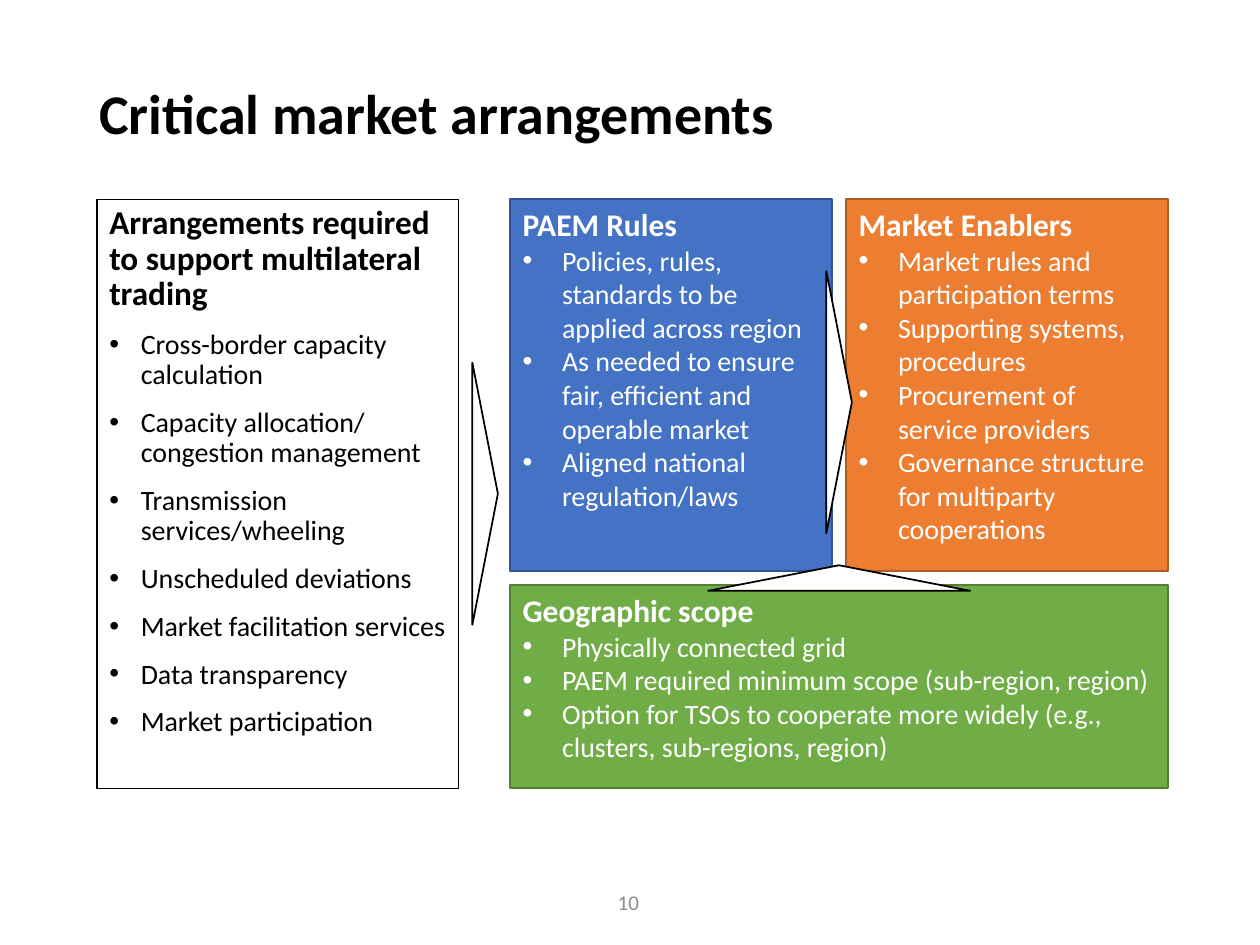
from pptx import Presentation
from pptx.dml.color import RGBColor
from pptx.enum.shapes import MSO_SHAPE
from pptx.enum.text import MSO_ANCHOR, PP_ALIGN
from pptx.oxml.xmlchemy import OxmlElement
from pptx.util import Pt

COLORS = {
    "black": "000000", "white": "FFFFFF", "grey": "8C8C8C",
    "blue": "4472C4", "blue_edge": "325491",
    "orange": "ED7D31", "orange_edge": "AF5C24",
    "green": "70AD47", "green_edge": "538035",
}
FONT = "Calibri"

# Grid of the panels, in points
LEFT, TOP, BOTTOM = 55.4, 113.8, 450.4
RULES_LEFT, PANEL_WIDTH, PANEL_HEIGHT, GAP = 291.6, 183.8, 212.4, 8.2
ENABLERS_LEFT = RULES_LEFT + PANEL_WIDTH + GAP
SCOPE_TOP = TOP + PANEL_HEIGHT + GAP
SCOPE_WIDTH = 2 * PANEL_WIDTH + GAP
ARROW_LENGTH, ARROW_DEPTH = 149.8, 14.6

REQUIRED = [
    "Cross-border capacity calculation",
    "Capacity allocation/ congestion management",
    "Transmission services/wheeling",
    "Unscheduled deviations",
    "Market facilitation services",
    "Data transparency",
    "Market participation",
]
RULES = [
    "Policies, rules, standards to be applied across region",
    "As needed to ensure fair, efficient and operable market",
    "Aligned national regulation/laws",
]
ENABLERS = [
    "Market rules and participation terms",
    "Supporting systems, procedures",
    "Procurement of service providers",
    "Governance structure for multiparty cooperations",
]
SCOPE = [
    "Physically connected grid",
    "PAEM required minimum scope (sub-region, region)",
    "Option for TSOs to cooperate more widely (e.g., clusters, sub-regions, region)",
]


def rgb(name):
    return RGBColor.from_string(COLORS[name])


def style(para, size, color, bold=False):
    font = para.font
    font.name, font.size, font.bold = FONT, Pt(size), bold
    font.color.rgb = rgb(color)


def add_bullet(para, indent):
    properties = para._p.get_or_add_pPr()
    properties.set("marL", str(Pt(indent)))
    properties.set("indent", str(-Pt(indent)))
    face = OxmlElement("a:buFont")
    face.set("typeface", "Arial")
    bullet = OxmlElement("a:buChar")
    bullet.set("char", "•")
    properties.extend([face, bullet])


def add_outlined(page, kind, left, top, width, height, fill, line, weight=1):
    shape = page.shapes.add_shape(kind, Pt(left), Pt(top), Pt(width), Pt(height))
    shape.shadow.inherit = False
    shape.fill.solid()
    shape.fill.fore_color.rgb = rgb(fill)
    shape.line.color.rgb = rgb(line)
    shape.line.width = Pt(weight)
    return shape


def add_panel(page, place, fill, line, heading, items, color="white", weight=1,
              heading_size=18, indent=22.5, spacing=1.0, before=0):
    box = add_outlined(page, MSO_SHAPE.RECTANGLE, *place, fill, line, weight)
    frame = box.text_frame
    frame.word_wrap = True
    frame.vertical_anchor = MSO_ANCHOR.TOP
    for index, text in enumerate([heading, *items]):
        para = frame.add_paragraph() if index else frame.paragraphs[0]
        para.text = text
        para.alignment = PP_ALIGN.LEFT
        para.line_spacing = spacing
        if index:
            para.space_before = Pt(before)
            add_bullet(para, indent)
        style(para, 16 if index else heading_size, color, bold=index == 0)


def add_arrow(page, center_x, center_y, rotation=0):
    arrow = add_outlined(page, MSO_SHAPE.ISOSCELES_TRIANGLE,
                         center_x - ARROW_LENGTH / 2, center_y - ARROW_DEPTH / 2,
                         ARROW_LENGTH, ARROW_DEPTH, "white", "black")
    arrow.rotation = rotation


def add_title(page, text):
    title = page.shapes.title
    title.left, title.top, title.width, title.height = Pt(49.5), Pt(45.4), Pt(621), Pt(73.4)
    frame = title.text_frame
    frame.text = text
    frame.word_wrap = True
    frame.vertical_anchor = MSO_ANCHOR.TOP
    para = frame.paragraphs[0]
    para.alignment = PP_ALIGN.LEFT
    para.line_spacing = 0.9
    style(para, 32, "black", bold=True)


def add_page_number(page, number):
    box = page.shapes.add_textbox(Pt(210.2), Pt(501.1), Pt(162), Pt(28.8))
    frame = box.text_frame
    frame.word_wrap = True
    frame.vertical_anchor = MSO_ANCHOR.MIDDLE
    para = frame.paragraphs[0]
    para.text = number
    para.alignment = PP_ALIGN.RIGHT
    style(para, 12, "grey")


def main():
    deck = Presentation()
    deck.slide_width, deck.slide_height = Pt(720), Pt(540)
    page = deck.slides.add_slide(deck.slide_layouts[5])
    add_title(page, "Critical market arrangements")

    # Requirements on the left
    add_panel(page, (LEFT, TOP, 206.6, BOTTOM - TOP), "white", "black",
              "Arrangements required to support multilateral trading", REQUIRED,
              color="black", weight=0.75, heading_size=19, indent=18,
              spacing=0.9, before=10)
    add_page_number(page, "10")

    # Coloured panels on the right
    add_panel(page, (RULES_LEFT, TOP, PANEL_WIDTH, PANEL_HEIGHT),
              "blue", "blue_edge", "PAEM Rules", RULES)
    add_panel(page, (ENABLERS_LEFT, TOP, PANEL_WIDTH, PANEL_HEIGHT),
              "orange", "orange_edge", "Market Enablers", ENABLERS)
    add_panel(page, (RULES_LEFT, SCOPE_TOP, SCOPE_WIDTH, BOTTOM - SCOPE_TOP),
              "green", "green_edge", "Geographic scope", SCOPE)

    # Arrows between the panels
    middle = RULES_LEFT + SCOPE_WIDTH / 2
    add_arrow(page, middle, 229.8, rotation=90)
    add_arrow(page, middle, SCOPE_TOP - GAP / 2, rotation=0)
    add_arrow(page, 277.2, (TOP + BOTTOM) / 2, rotation=90)

    deck.save("out.pptx")


if __name__ == "__main__":
    main()
